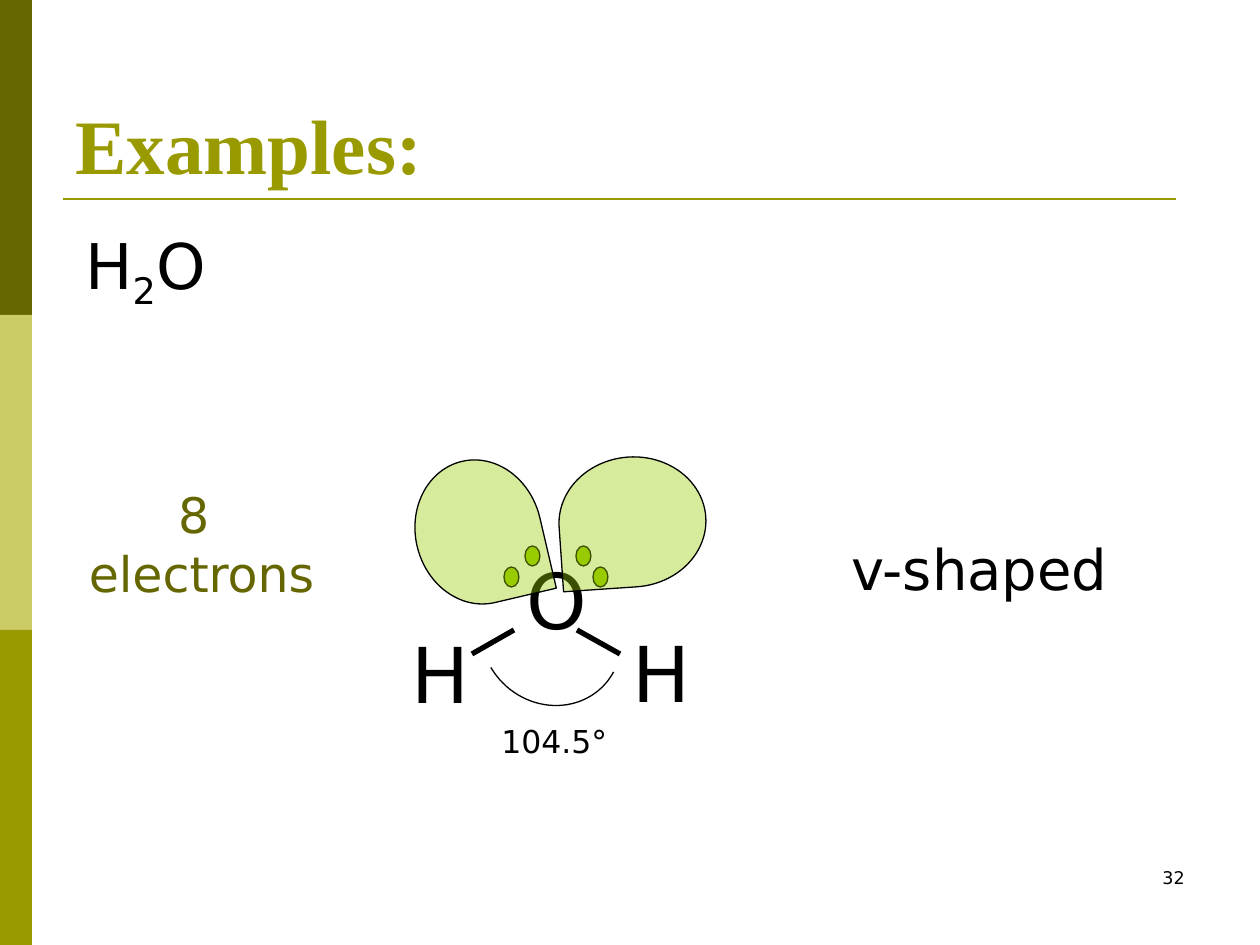
import pptx
import pptx.util
import pptx.dml.color
import pptx.enum.shapes
import pptx.enum.text
import pptx.oxml

PX = 914400 // 126
SHAPE = pptx.enum.shapes.MSO_SHAPE
ALIGN = pptx.enum.text.PP_ALIGN
ANCHOR = pptx.enum.text.MSO_ANCHOR
A = 'xmlns:a="http://schemas.openxmlformats.org/drawingml/2006/main"'

BANDS = ["666600", "CCCC66", "999900"]
BAND_SIZE = (32, 315)

BODY = {"size": 28, "name": "DejaVu Sans", "color": "000000"}
TITLE = {"size": 44, "name": "Times New Roman", "color": "999900", "bold": True}
ATOM = {**BODY, "size": 44}
TEXTS = [
    ((63, 38, 1134, 158), [["Examples:"]], TITLE, ALIGN.LEFT, ANCHOR.BOTTOM),
    ((73, 220, 189, 158), [["H", "_2", "O"]], {**BODY, "size": 36}, ALIGN.LEFT, ANCHOR.TOP),
    ((903, 861, 294, 63), [["32"]], {**BODY, "size": 10}, ALIGN.RIGHT, ANCHOR.TOP),
    ((73, 478, 257, 131), [["8 "], ["electrons"]], {**BODY, "color": "666600"}, ALIGN.CENTER, ANCHOR.TOP),
    ((514, 546, 84, 106), [["O"]], ATOM, ALIGN.LEFT, ANCHOR.TOP),
    ((620, 619, 84, 106), [["H"]], ATOM, ALIGN.LEFT, ANCHOR.TOP),
    ((399, 620, 84, 106), [["H"]], ATOM, ALIGN.LEFT, ANCHOR.TOP),
    ((489, 716, 141, 50), [["104.5°"]], {**BODY, "size": 18}, ALIGN.LEFT, ANCHOR.TOP),
    ((804, 528, 351, 81), [["v-shaped"]], {**BODY, "size": 32}, ALIGN.CENTER, ANCHOR.TOP),
]

LINES = [
    ((63, 199, 1176, 199), "999900", 1.5),
    ((514, 630, 472, 654), "000000", 3),
    ((620, 654, 577, 630), "000000", 3),
]

ELECTRONS = [(504, 567), (525, 546), (593, 567), (576, 546)]
ELECTRON_SIZE = (15, 20)
ARC = (483, 562, 136, 146)
ARC_ANGLES = (153.33, 10.02)
LONE_PAIRS = [((406, 469, 145, 126), 76.8), ((559, 457, 147, 130), 176.1)]


def rgb(value):
    return pptx.dml.color.RGBColor.from_string(value)


def px(values):
    return [v * PX for v in values]


def add_shape(s, kind, box, fill=None, line=None, rotation=0):
    sp = s.shapes.add_shape(kind, *px(box))
    sp.shadow.inherit = False
    sp.rotation = rotation
    if fill:
        sp.fill.solid()
        sp.fill.fore_color.rgb = rgb(fill)
    else:
        sp.fill.background()
    if line:
        sp.line.color.rgb = rgb(line)
        sp.line.width = pptx.util.Pt(0.75)
    else:
        sp.line.fill.background()
    return sp


def add_line(s, ends, color, width):
    c = s.shapes.add_connector(pptx.enum.shapes.MSO_CONNECTOR.STRAIGHT, *px(ends))
    c.line.color.rgb = rgb(color)
    c.line.width = pptx.util.Pt(width)
    c._element.spPr.append(pptx.oxml.parse_xml(f"<a:effectLst {A}/>"))


def add_text(s, box, lines, style, align, anchor):
    tf = s.shapes.add_textbox(*px(box)).text_frame
    tf.word_wrap = True
    tf.vertical_anchor = anchor
    p = tf.paragraphs[0]
    p.alignment = align
    for i, line in enumerate(lines):
        if i:
            p.add_line_break()
        for part in line:
            r = p.add_run()
            r.text = part.lstrip("_")
            for key, value in style.items():
                if key == "color":
                    r.font.color.rgb = rgb(value)
                else:
                    setattr(r.font, key, pptx.util.Pt(value) if key == "size" else value)
            if part.startswith("_"):
                r._r.get_or_add_rPr().set("baseline", "-25000")


def main():
    prs = pptx.Presentation()
    prs.slide_width, prs.slide_height = px((1260, 945))
    s = prs.slides.add_slide(prs.slide_layouts[6])
    width, height = BAND_SIZE
    for i, color in enumerate(BANDS):
        add_shape(s, SHAPE.RECTANGLE, (0, i * height, width, height), color)
    for text in TEXTS:
        add_text(s, *text)
    for line in LINES:
        add_line(s, *line)
    for corner in ELECTRONS:
        add_shape(s, SHAPE.OVAL, corner + ELECTRON_SIZE, "99CC00", "000000")
    arc = add_shape(s, SHAPE.ARC, ARC, None, "000000", 135)
    for i, angle in enumerate(ARC_ANGLES):
        arc.adjustments[i] = angle
    for box, rotation in LONE_PAIRS:
        sp = add_shape(s, SHAPE.TEAR, box, "99CC00", "000000", rotation)
        color = sp.fill._xPr.solidFill.srgbClr
        color.append(pptx.oxml.parse_xml(f'<a:alpha {A} val="39000"/>'))
    prs.save("out.pptx")


if __name__ == "__main__":
    main()
